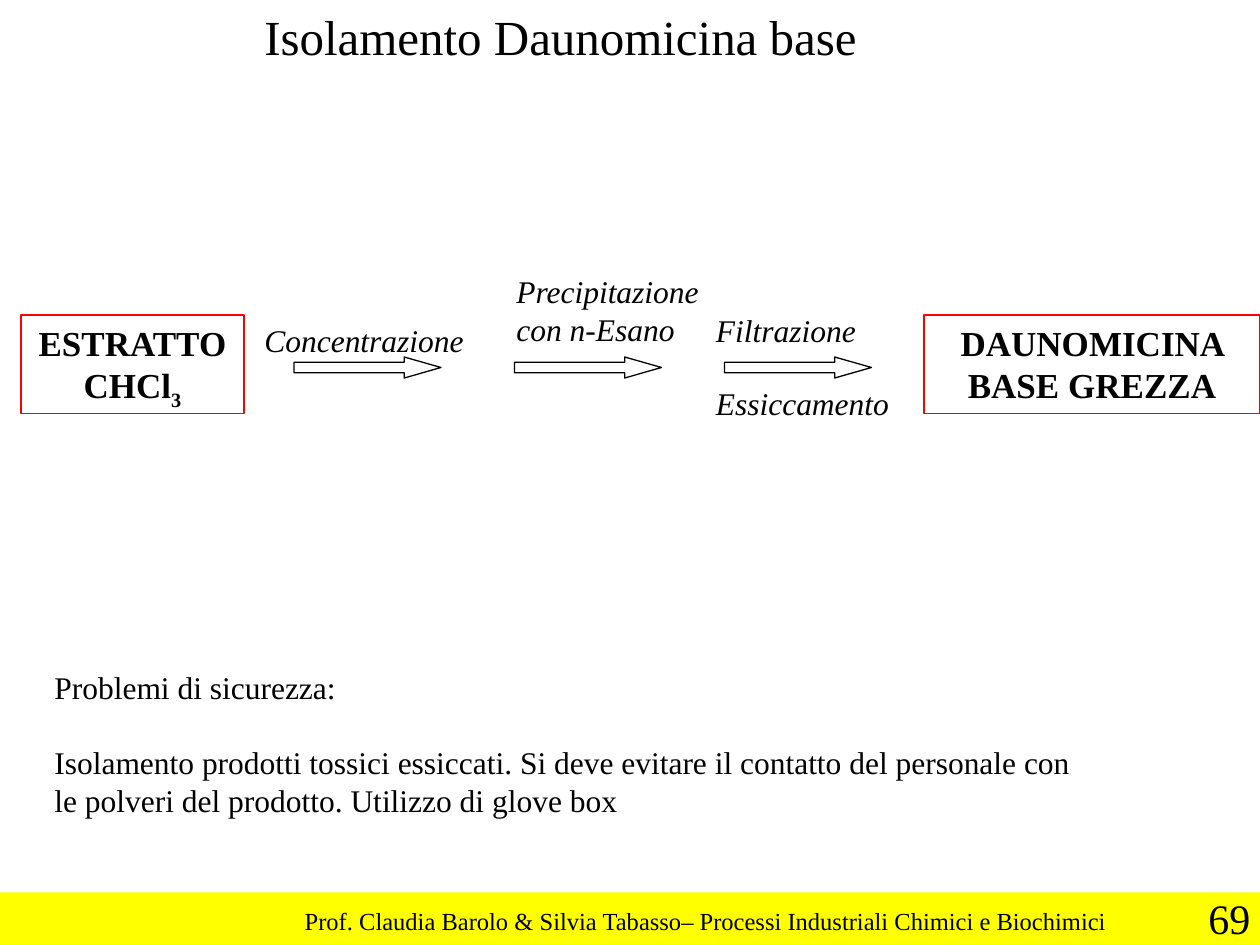
import pptx
import pptx.dml.color
import pptx.enum.shapes
import pptx.enum.text
import pptx.util

WIDE, HIGH = 10, 7.5
UNIT = WIDE / 120  # grid step
FONT = "Times New Roman"
BLACK, RED, YELLOW = "000000", "FF0000", "FFFF00"
KIND = pptx.enum.shapes.MSO_SHAPE
ALIGN = pptx.enum.text.PP_ALIGN


def inch(size):
    return pptx.util.Inches(size)


def paint(form, tint):
    """Give a fill or a font colour its solid tint."""
    if hasattr(form, "solid"):
        form.solid()
        form = form.fore_color
    form.rgb = pptx.dml.color.RGBColor.from_string(tint)


def add_run(para, text, size, bold=False, slant=False, base=0):
    run = para.add_run()
    run.text = text
    font = run.font
    font.name, font.size = FONT, pptx.util.Pt(size)
    font.bold, font.italic = bold, slant
    paint(font.color, BLACK)
    if base:
        font._element.set("baseline", str(base * 1000))


def add_text(slide, col, row, wide, high, lines, size, slant=False):
    """Unwrapped text at a grid point; each line is (text, space before)."""
    box = slide.shapes.add_textbox(
        inch(col * UNIT), inch(row * UNIT), inch(wide), inch(high))
    frame = box.text_frame
    frame.word_wrap = False
    for i, (text, gap) in enumerate(lines):
        para = frame.paragraphs[0] if i == 0 else frame.add_paragraph()
        para.space_before = pptx.util.Pt(gap)
        add_run(para, text, size, slant=slant)


def add_form(slide, kind, col, row, wide, high, fill=None, line=None):
    form = slide.shapes.add_shape(
        kind, inch(col * UNIT), inch(row * UNIT), inch(wide), inch(high))
    form.shadow.inherit = False
    if fill:
        paint(form.fill, fill)
    else:
        form.fill.background()
    if line:
        paint(form.line.fill, line)
        form.line.width = pptx.util.Pt(0.75)
    else:
        form.line.fill.background()
    return form


def add_box(slide, col, wide, runs):
    """Red frame with bold centred runs of (text, baseline)."""
    box = add_form(slide, KIND.RECTANGLE, col, 30, wide, 0.78, line=RED)
    frame = box.text_frame
    frame.word_wrap = True
    frame.vertical_anchor = pptx.enum.text.MSO_ANCHOR.TOP
    para = frame.paragraphs[0]
    para.alignment = ALIGN.CENTER
    for text, base in runs:
        add_run(para, text, 20, bold=True, base=base)


def add_arrow(slide, col):
    arrow = add_form(slide, KIND.RIGHT_ARROW, col, 34, 14 * UNIT, 2 * UNIT,
                     line=BLACK)
    arrow.adjustments[0] = 0.5
    arrow.adjustments[1] = 1.75


def main():
    deck = pptx.Presentation()
    deck.slide_width, deck.slide_height = inch(WIDE), inch(HIGH)
    slide = deck.slides.add_slide(deck.slide_layouts[6])

    # Footer band
    add_form(slide, KIND.RECTANGLE, 0, 85, WIDE, HIGH - 85 * UNIT, fill=YELLOW)
    credit = ("Prof. Claudia Barolo & Silvia Tabasso– "
              "Processi Industriali Chimici e Biochimici")
    add_text(slide, 27.84, 85.68, 6.77, 0.34, [(credit, 0)], 14)
    add_text(slide, 113.9, 84.4, 0.53, 0.5, [("69", 0)], 24)

    # Title
    add_text(slide, 24, 0, 4.9, 0.57, [("Isolamento Daunomicina base", 0)], 28)

    # Start and end products
    add_box(slide, 2, 1.77, [("ESTRATTO CHCl", 0), ("3", -25)])
    add_box(slide, 88, 32 * UNIT, [("DAUNOMICINA BASE GREZZA", 0)])

    # Process steps
    for col in (28, 49, 69):
        add_arrow(slide, col)
    steps = [
        (24, 30, 1.78, 0.4, ["Concentrazione"]),
        (48, 25.3, 1.66, 0.7, ["Precipitazione", "con n-Esano"]),
        (67, 29, 1.31, 0.4, ["Filtrazione"]),
        (67, 36, 1.58, 0.4, ["Essiccamento"]),
    ]
    for col, row, wide, high, words in steps:
        lines = [(word, 0) for word in words]
        add_text(slide, col, row, wide, high, lines, 18, slant=True)

    # Safety note
    note = [
        ("Problemi di sicurezza:", 0),
        ("Isolamento prodotti tossici essiccati. Si deve evitare il contatto "
         "del personale con", 21.5),
        ("le polveri del prodotto. Utilizzo di glove box", 0),
    ]
    add_text(slide, 4, 63, 8.27, 1.3, note, 18)

    deck.save("out.pptx")


if __name__ == "__main__":
    main()
